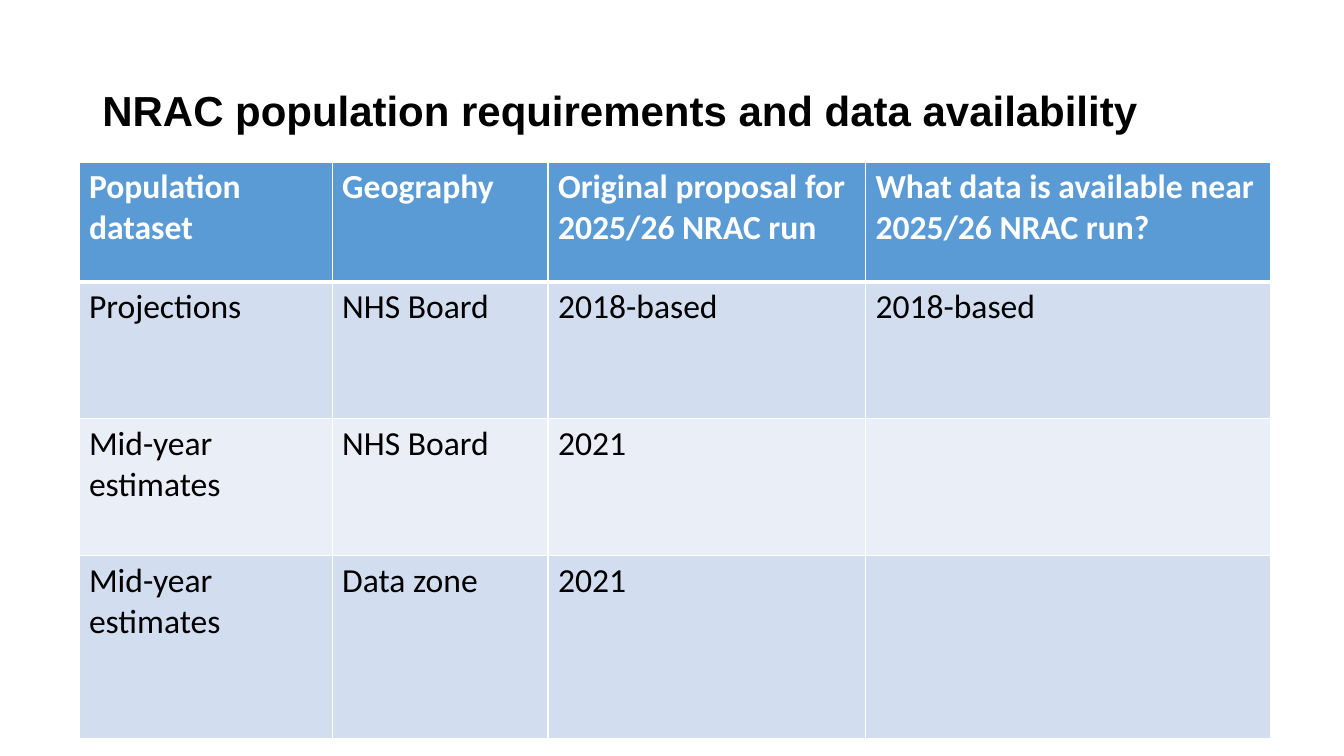
from lxml import etree
from pptx import Presentation
from pptx.dml.color import RGBColor
from pptx.enum.text import MSO_ANCHOR
from pptx.oxml.ns import qn
from pptx.util import Cm, Pt

MIDDLE = MSO_ANCHOR.MIDDLE
BLACK = RGBColor(0x00, 0x00, 0x00)
WHITE = RGBColor(0xFF, 0xFF, 0xFF)
HEADER_BLUE = RGBColor(0x5B, 0x9B, 0xD5)
BAND_DARK = RGBColor(0xD2, 0xDE, 0xEF)
BAND_LIGHT = RGBColor(0xEA, 0xEF, 0xF7)

TITLE_FORMAT = {"name": "Arial", "size": Pt(30), "bold": True}
HEADER_FORMAT = {"name": "Calibri", "size": Pt(24), "bold": True}
BODY_FORMAT = {**HEADER_FORMAT, "bold": False}

COLUMN_WIDTHS = [6.38, 5.44, 8, 10.2]
ROW_HEIGHTS = [3.02, 3.45, 3.45, 4.62]
ROWS = [
    ["Population dataset", "Geography", "Original proposal for 2025/26 NRAC run",
     "What data is available near 2025/26 NRAC run?"],
    ["Projections", "NHS Board", "2018-based", "2018-based"],
    ["Mid-year estimates", "NHS Board", "2021", ""],
    ["Mid-year estimates", "Data zone", "2021", ""],
]


def write_text(para, text, font_format, color):
    span = para.add_run()
    span.text = text
    for name, value in font_format.items():
        setattr(span.font, name, value)
    span.font.color.rgb = color


def add_title(page, text):
    box = page.shapes.add_textbox(Cm(2.33), Cm(1.01), Cm(29.21), Cm(3.68))
    box.text_frame.word_wrap = True
    box.text_frame.vertical_anchor = MIDDLE
    para = box.text_frame.paragraphs[0]
    para.line_spacing = 0.9
    write_text(para, text, TITLE_FORMAT, BLACK)


def set_borders(cell, widths):
    properties = cell._tc.get_or_add_tcPr()
    for position, (side, width) in enumerate(widths.items()):
        line = etree.Element(qn(f"a:ln{side}"), w=str(Pt(width)))
        fill = etree.SubElement(line, qn("a:solidFill"))
        etree.SubElement(fill, qn("a:srgbClr"), val=str(WHITE))
        properties.insert(position, line)


def fill_cell(cell, text, row_index):
    is_header = row_index == 0
    cell.fill.solid()
    if is_header:
        cell.fill.fore_color.rgb = HEADER_BLUE
    else:
        cell.fill.fore_color.rgb = BAND_DARK if row_index % 2 else BAND_LIGHT
    top = 3 if row_index == 1 else 1
    bottom = 3 if is_header else 1
    set_borders(cell, {"L": 1, "R": 1, "T": top, "B": bottom})
    if text:
        write_text(cell.text_frame.paragraphs[0], text,
                   HEADER_FORMAT if is_header else BODY_FORMAT,
                   WHITE if is_header else BLACK)


def add_data_table(page):
    frame = page.shapes.add_table(
        len(ROWS), len(COLUMN_WIDTHS), Cm(1.99), Cm(4.08),
        Cm(sum(COLUMN_WIDTHS)), Cm(sum(ROW_HEIGHTS)))
    table = frame.table
    for column, width in zip(table.columns, COLUMN_WIDTHS):
        column.width = Cm(width)
    for row_index, (row, height) in enumerate(zip(table.rows, ROW_HEIGHTS)):
        row.height = Cm(height)
        for cell, text in zip(row.cells, ROWS[row_index]):
            fill_cell(cell, text, row_index)


def main():
    deck = Presentation()
    deck.slide_width = Cm(33.87)
    deck.slide_height = Cm(19.05)
    page = deck.slides.add_slide(deck.slide_layouts[6])
    add_title(page, "NRAC population requirements and data availability")
    add_data_table(page)
    deck.save("out.pptx")


if __name__ == "__main__":
    main()
